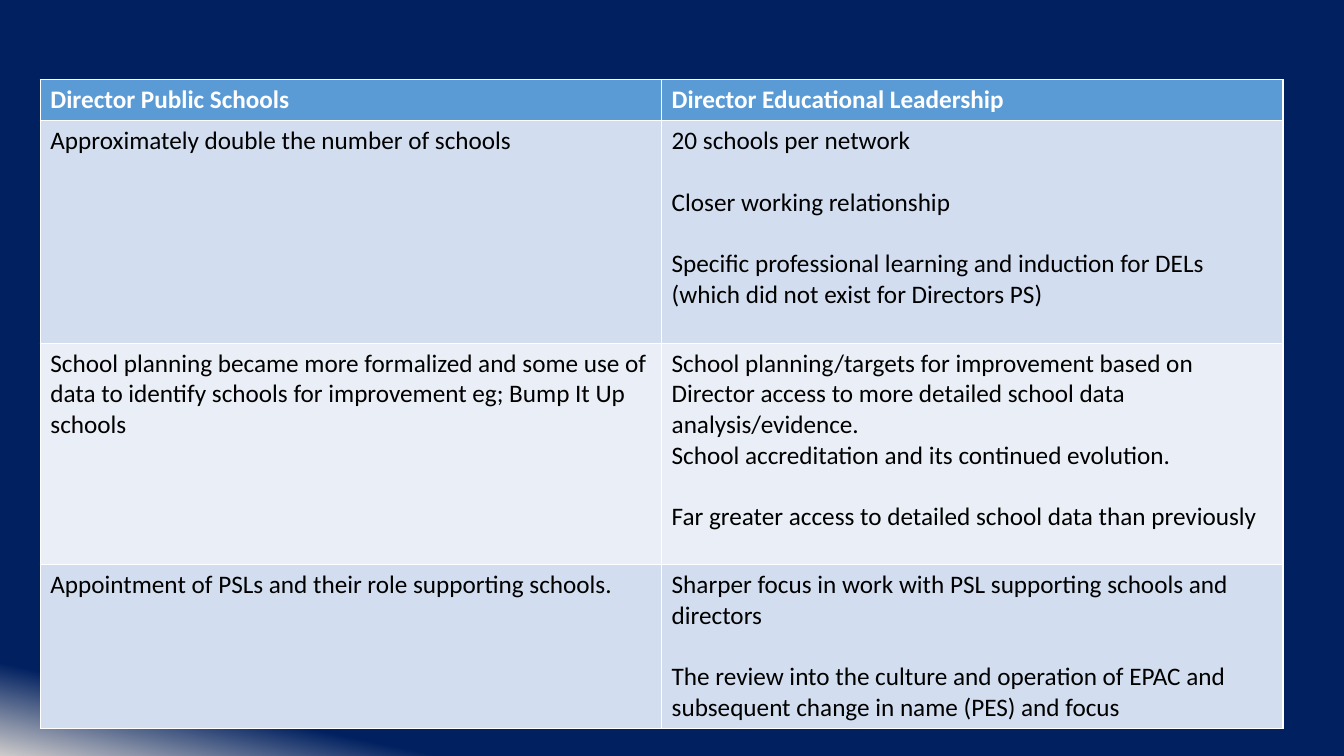
"""Build a slide comparing the two director roles in a table."""
import pptx
import pptx.util
import pptx.dml.color

Pt = pptx.util.Pt

COLORS = {
    "navy": "002060", "glow": "CDCBCB", "header": "5B9BD5",
    "odd": "D2DEEF", "even": "EAEFF7", "white": "FFFFFF", "black": "000000",
}
FONT, SIZE, LINE = "Calibri", 18, 22
LEFT, TOP, COLUMN_WIDTH = 28.8, 56.9, 443.8
ROW_HEIGHTS = [29.4, 158.8, 158.2, 116.6]

# Each cell holds blocks set apart by one line; each block holds paragraphs.
ROLES = [
    ([["Director Public Schools"]], [["Director Educational Leadership"]]),
    ([["Approximately double the number of schools"]],
     [["20 schools per network"],
      ["Closer working relationship"],
      ["Specific professional learning and induction for DELs "
       "(which did not exist for Directors PS)"]]),
    ([["School planning became more formalized and some use of data to "
       "identify schools for improvement eg; Bump It Up schools"]],
     [["School planning/targets for improvement based on Director access to "
       "more detailed school data analysis/evidence.",
       "School accreditation and its continued evolution."],
      ["Far greater access to detailed school data than previously"]]),
    ([["Appointment of PSLs and their role supporting schools."]],
     [["Sharper focus in work with PSL supporting schools and directors"],
      ["The review into the culture and operation of EPAC and subsequent "
       "change in name (PES) and focus"]]),
]


def rgb(name):
    """Return the named colour."""
    return pptx.dml.color.RGBColor.from_string(COLORS[name])


def paint_background(slide):
    """Fill the slide with navy and a pale glow at the lower left."""
    fill = slide.background.fill
    fill.gradient()
    fill.gradient_angle = 360 - 102
    for stop, (position, color) in zip(
            fill.gradient_stops, [(0.91, "navy"), (1, "glow")]):
        stop.position = position
        stop.color.rgb = rgb(color)


def write_cell(cell, blocks, row):
    """Fill one cell with its blocks of paragraphs."""
    shade = "header" if row == 0 else ("odd" if row % 2 else "even")
    cell.fill.solid()
    cell.fill.fore_color.rgb = rgb(shade)
    lines = [(text, block > 0 and index == 0)
             for block, texts in enumerate(blocks)
             for index, text in enumerate(texts)]
    for number, (text, gap) in enumerate(lines):
        frame = cell.text_frame
        paragraph = frame.add_paragraph() if number else frame.paragraphs[0]
        paragraph.text = text
        paragraph.space_before = Pt(LINE if gap else 0)
        paragraph.font.name = FONT
        paragraph.font.size = Pt(SIZE)
        paragraph.font.bold = row == 0
        paragraph.font.color.rgb = rgb("black" if row else "white")


def main():
    """Assemble and save the slide."""
    deck = pptx.Presentation()
    deck.slide_width, deck.slide_height = Pt(960), Pt(540)
    slide = deck.slides.add_slide(deck.slide_layouts[6])
    paint_background(slide)
    comparison = slide.shapes.add_table(
        len(ROLES), 2, Pt(LEFT), Pt(TOP),
        Pt(2 * COLUMN_WIDTH), Pt(sum(ROW_HEIGHTS))).table
    for column in comparison.columns:
        column.width = Pt(COLUMN_WIDTH)
    for row, (height, cells) in enumerate(zip(ROW_HEIGHTS, ROLES)):
        comparison.rows[row].height = Pt(height)
        for column, blocks in enumerate(cells):
            write_cell(comparison.cell(row, column), blocks, row)
    deck.save("out.pptx")


if __name__ == "__main__":
    main()
